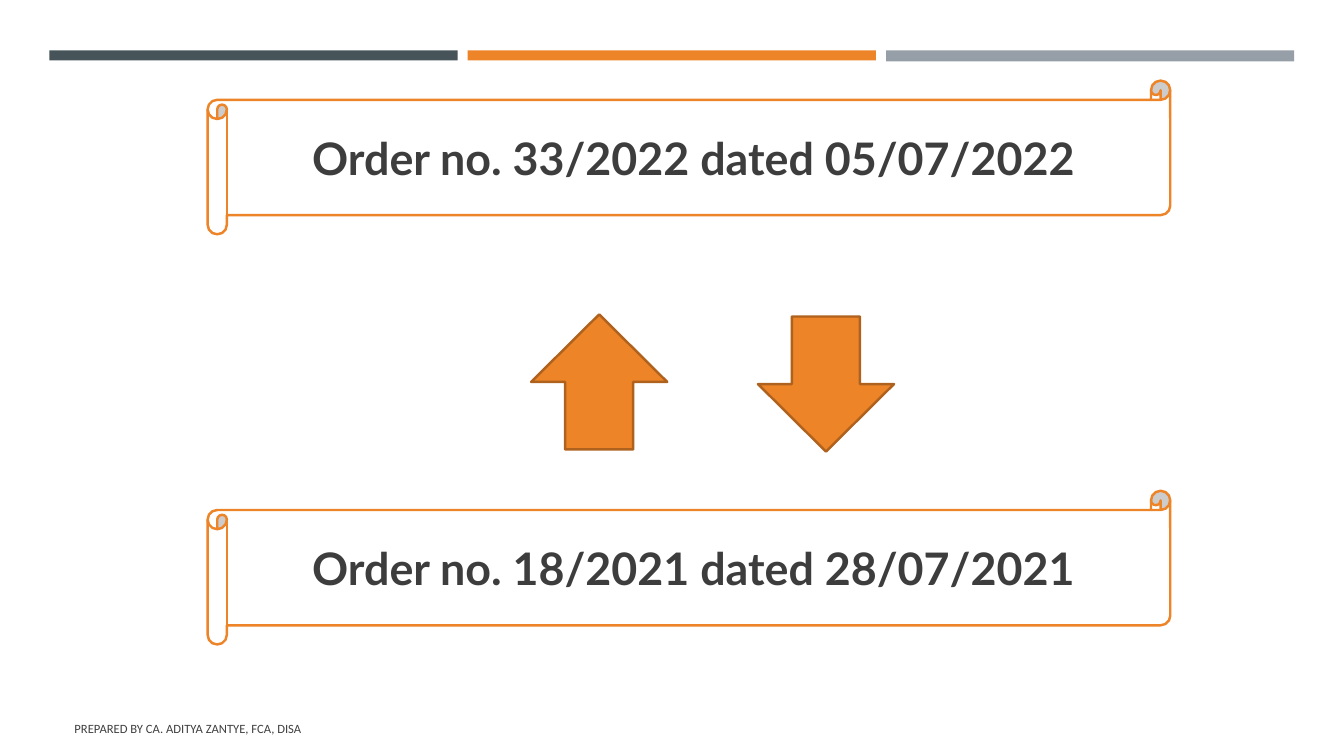
from pptx import Presentation
from pptx.dml.color import RGBColor
from pptx.enum.shapes import MSO_SHAPE
from pptx.enum.text import MSO_ANCHOR, PP_ALIGN
from pptx.util import Pt

ORDERS = [
    ("Order no. 33/2022 dated 05/07/2022", 57.6),
    ("Order no. 18/2021 dated 28/07/2021", 350.6),
]
ARROWS = [
    (MSO_SHAPE.UP_ARROW, 379.4, 224.6),
    (MSO_SHAPE.DOWN_ARROW, 541.4, 226.1),
]
BARS = [("slate", 7.2), ("orange", 7.2), ("grey", 7.9)]
FOOTER = "PREPARED BY CA. ADITYA ZANTYE, FCA, DISA"

THEME = {
    "slate": "465359", "orange": "ED8428", "grey": "969FA7",
    "white": "FFFFFF", "arrow_line": "AF621E",
    "order_text": "3D3D3D", "footer_text": "404040",
    "order_font": "Lato", "footer_font": "Calibri",
    "order_size": 32, "footer_size": 9, "line_width": 1.75,
}
BAR_LEFT, BAR_TOP, BAR_WIDTH, BAR_GAP = 35.3, 36, 291.6, 7.2


def color(name):
    return RGBColor.from_string(THEME[name])


def add_shape(s, kind, left, top, width, height, fill, line=None):
    sp = s.shapes.add_shape(kind, Pt(left), Pt(top), Pt(width), Pt(height))
    sp.shadow.inherit = False
    sp.fill.solid()
    sp.fill.fore_color.rgb = color(fill)
    if line:
        sp.line.color.rgb = color(line)
        sp.line.width = Pt(THEME["line_width"])
    else:
        sp.line.fill.background()
    return sp


def write(sp, text, style, bold=False, align=PP_ALIGN.LEFT):
    tf = sp.text_frame
    tf.word_wrap = True
    tf.vertical_anchor = MSO_ANCHOR.MIDDLE
    p = tf.paragraphs[0]
    p.alignment = align
    r = p.add_run()
    r.text = text
    r.font.name = THEME[f"{style}_font"]
    r.font.size = Pt(THEME[f"{style}_size"])
    r.font.color.rgb = color(f"{style}_text")
    r.font.bold = bold


def main():
    prs = Presentation()
    prs.slide_width, prs.slide_height = Pt(960), Pt(540)
    s = prs.slides.add_slide(prs.slide_layouts[6])

    for i, (fill, height) in enumerate(BARS):
        left = BAR_LEFT + i * (BAR_WIDTH + BAR_GAP)
        add_shape(s, MSO_SHAPE.RECTANGLE, left, BAR_TOP, BAR_WIDTH, height, fill)

    footer = s.shapes.add_textbox(Pt(46.1), Pt(506.2), Pt(544.3), Pt(28.8))
    write(footer, FOOTER, "footer")

    for text, top in ORDERS:
        sp = add_shape(s, MSO_SHAPE.HORIZONTAL_SCROLL, 148.3, top, 687.6, 109.8,
                       "white", "orange")
        write(sp, text, "order", bold=True, align=PP_ALIGN.CENTER)

    for kind, left, top in ARROWS:
        add_shape(s, kind, left, top, 97.2, 96.5, "orange", "arrow_line")

    prs.save("out.pptx")


if __name__ == "__main__":
    main()
